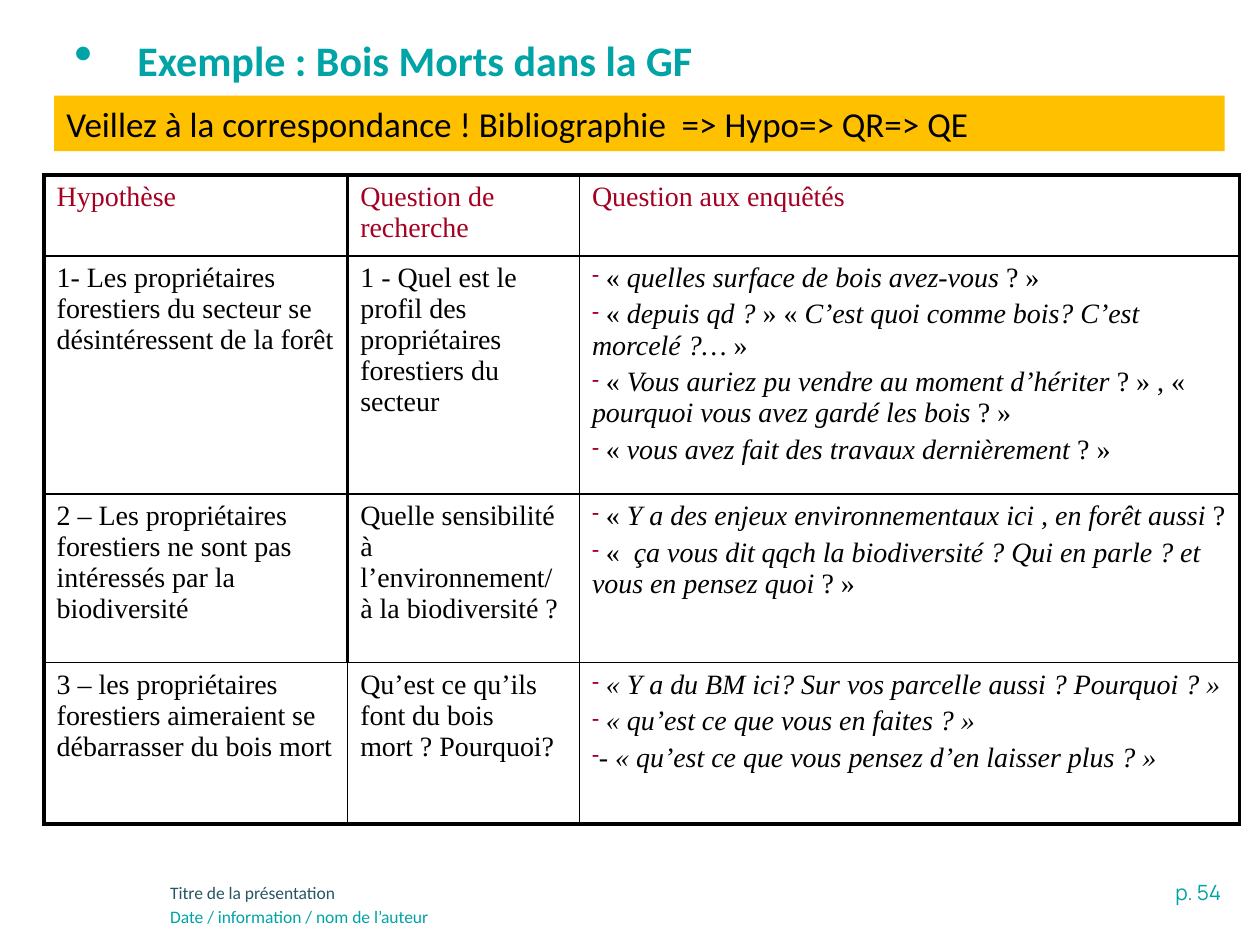
"""Build the slide that links hypotheses, research questions and interview questions."""
from dataclasses import dataclass

from lxml import etree
from pptx import Presentation
from pptx.dml.color import RGBColor
from pptx.enum.shapes import MSO_SHAPE
from pptx.enum.text import MSO_ANCHOR, MSO_AUTO_SIZE, PP_ALIGN
from pptx.oxml.ns import qn
from pptx.util import Cm, Pt

LEFT, RIGHT = PP_ALIGN.LEFT, PP_ALIGN.RIGHT
MIDDLE = MSO_ANCHOR.MIDDLE
NO_AUTOFIT = MSO_AUTO_SIZE.NONE
RECT = MSO_SHAPE.RECTANGLE
TEAL, RED, BLACK = "00A3A6", "A50021", "000000"
THICK, THIN = 2.25, 1


@dataclass
class Label:
    text: str
    box: tuple
    size: float
    color: str
    font: str = "Calibri"
    align: PP_ALIGN = LEFT
    fill: str = ""


LABELS = [
    Label("p. 54", (19.08, 17.6, 5.79, 0.76), 12, TEAL, "Manrope", RIGHT),
    Label("Titre de la présentation", (3.18, 17.65, 18.64, 0.71), 10, "275662"),
    Label("Date / information / nom de l’auteur", (3.18, 18.14, 18.64, 0.71), 10, TEAL),
]
BANNER = Label("Veillez à la correspondance ! Bibliographie  => Hypo=> QR=> QE",
               (1.09, 1.93, 23.6, 1.12), 20, BLACK, fill="FFC000")

COLS = (6.12, 4.67, 13.31)
HEIGHTS = (1.63, 4.8, 3.4, 3.25)
ROWS = [
    ("Hypothèse", "Question de recherche", ["Question aux enquêtés"]),
    ("1- Les propriétaires forestiers du secteur se désintéressent de la forêt",
     "1 - Quel est le profil des propriétaires forestiers du secteur",
     [" « *quelles surface de bois avez-vous *? »",
      " « *depuis qd ?* » « *C’est quoi comme bois? C’est morcelé ?…* »",
      " « *Vous auriez pu vendre au moment d’hériter* ? » , « *pourquoi vous avez gardé les bois* ? »",
      " « *vous avez fait des travaux dernièrement* ? »"]),
    ("2 – Les propriétaires forestiers ne sont pas intéressés par la biodiversité",
     "Quelle sensibilité à l’environnement/ à la biodiversité ?",
     [" « *Y a des enjeux environnementaux ici , en forêt aussi* ?",
      " « * ça vous dit qqch la biodiversité ? Qui en parle ? et vous en pensez quoi* ? »"]),
    ("3 – les propriétaires forestiers aimeraient se débarrasser du bois mort",
     "Qu’est ce qu’ils font du bois mort ? Pourquoi?",
     ["* « Y a du BM ici? Sur vos parcelle aussi ? Pourquoi ? »",
      "* « qu’est ce que vous en faites ? »",
      "*- « qu’est ce que vous pensez d’en laisser plus ? »"]),
]


def rgb(color: str) -> RGBColor:
    """Turn a hex string into a colour."""
    return RGBColor.from_string(color)


def cm(values: tuple) -> list:
    """Turn centimetres into lengths."""
    return [Cm(v) for v in values]


def add_run(p, text: str, size: float, color: str, font: str, bold=False, italic=False) -> None:
    """Add one formatted run."""
    r = p.add_run()
    r.text = text
    f = r.font
    f.size, f.name, f.bold, f.italic = Pt(size), font, bold, italic
    f.color.rgb = rgb(color)


def add_bullet(p, char: str, color: str, percent: int, hang: float = 0) -> None:
    """Give a paragraph a bullet and a hanging indent."""
    pPr = p._p.get_or_add_pPr()
    pPr.set("marL", str(Cm(hang)))
    pPr.set("indent", str(-Cm(hang)))
    clr = etree.SubElement(pPr, qn("a:buClr"))
    etree.SubElement(clr, qn("a:srgbClr"), val=color)
    etree.SubElement(pPr, qn("a:buSzPct"), val=str(percent * 1000))
    etree.SubElement(pPr, qn("a:buChar"), char=char)


def add_label(s, label: Label) -> None:
    """Draw a text box, or a rectangle if the label is filled."""
    box = cm(label.box)
    if label.fill:
        sp = s.shapes.add_shape(RECT, *box)
        sp.shadow.inherit = False
        sp.fill.solid()
        sp.fill.fore_color.rgb = rgb(label.fill)
        sp.line.fill.background()
    else:
        sp = s.shapes.add_textbox(*box)
    tf = sp.text_frame
    tf.word_wrap = True
    p = tf.paragraphs[0]
    p.alignment = label.align
    add_run(p, label.text, label.size, label.color, label.font)


def set_borders(cell, widths: dict) -> None:
    """Draw the four cell borders, given in points."""
    tcPr = cell._tc.get_or_add_tcPr()
    for side in "LRTB":
        ln = etree.SubElement(tcPr, qn(f"a:ln{side}"), w=str(Pt(widths[side])))
        fill = etree.SubElement(ln, qn("a:solidFill"))
        etree.SubElement(fill, qn("a:srgbClr"), val=BLACK)


def fill_cell(cell, lines: list, color: str, bulleted: bool) -> None:
    """Write lines in which asterisks switch italics on and off."""
    tf = cell.text_frame
    for i, line in enumerate(lines):
        p = tf.add_paragraph() if i else tf.paragraphs[0]
        if bulleted:
            add_bullet(p, "-", RED, 75)
        if i:
            p.space_before = Pt(3.2)
        for j, part in enumerate(line.split("*")):
            if part:
                add_run(p, part, 16, color, "Times New Roman", italic=j % 2 == 1)


def add_question_table(s) -> None:
    """Draw the table with its heavy frame and first divider."""
    last_row, last_col = len(ROWS) - 1, len(COLS) - 1
    box = cm((0.89, 3.53, sum(COLS), sum(HEIGHTS)))
    tbl = s.shapes.add_table(len(ROWS), len(COLS), *box).table
    tbl.first_row = tbl.horz_banding = False
    for col, width in zip(tbl.columns, COLS):
        col.width = Cm(width)
    for i, (height, texts) in enumerate(zip(HEIGHTS, ROWS)):
        tbl.rows[i].height = Cm(height)
        divider = THIN if i == last_row else THICK
        edges = (THICK, divider, THIN, THICK)
        for j, text in enumerate(texts):
            cell = tbl.cell(i, j)
            set_borders(cell, {"L": edges[j], "R": edges[j + 1],
                               "T": THIN if i else THICK,
                               "B": THICK if i == last_row else THIN})
            cell.fill.background()
            lines = text if j == last_col else [text]
            fill_cell(cell, lines, BLACK if i else RED, i > 0 and j == last_col)


def add_title(s) -> None:
    """Place and write the bulleted title."""
    sp = s.shapes.title
    sp.left, sp.top, sp.width, sp.height = cm((1.5, 0.53, 21.59, 1.47))
    tf = sp.text_frame
    tf.auto_size, tf.vertical_anchor, tf.word_wrap = NO_AUTOFIT, MIDDLE, True
    tf.margin_left = 0
    p = tf.paragraphs[0]
    add_bullet(p, "•", TEAL, 125, 1.27)
    p.alignment, p.line_spacing = LEFT, 0.9
    add_run(p, "Exemple : Bois Morts dans la GF", 24, TEAL, "Calibri", bold=True)


def main() -> None:
    """Build and save the slide."""
    prs = Presentation()
    prs.slide_width, prs.slide_height = Cm(25.4), Cm(19.05)
    s = prs.slides.add_slide(prs.slide_layouts[5])
    for label in LABELS:
        add_label(s, label)
    add_title(s)
    add_question_table(s)
    add_label(s, BANNER)
    prs.save("out.pptx")


if __name__ == "__main__":
    main()
